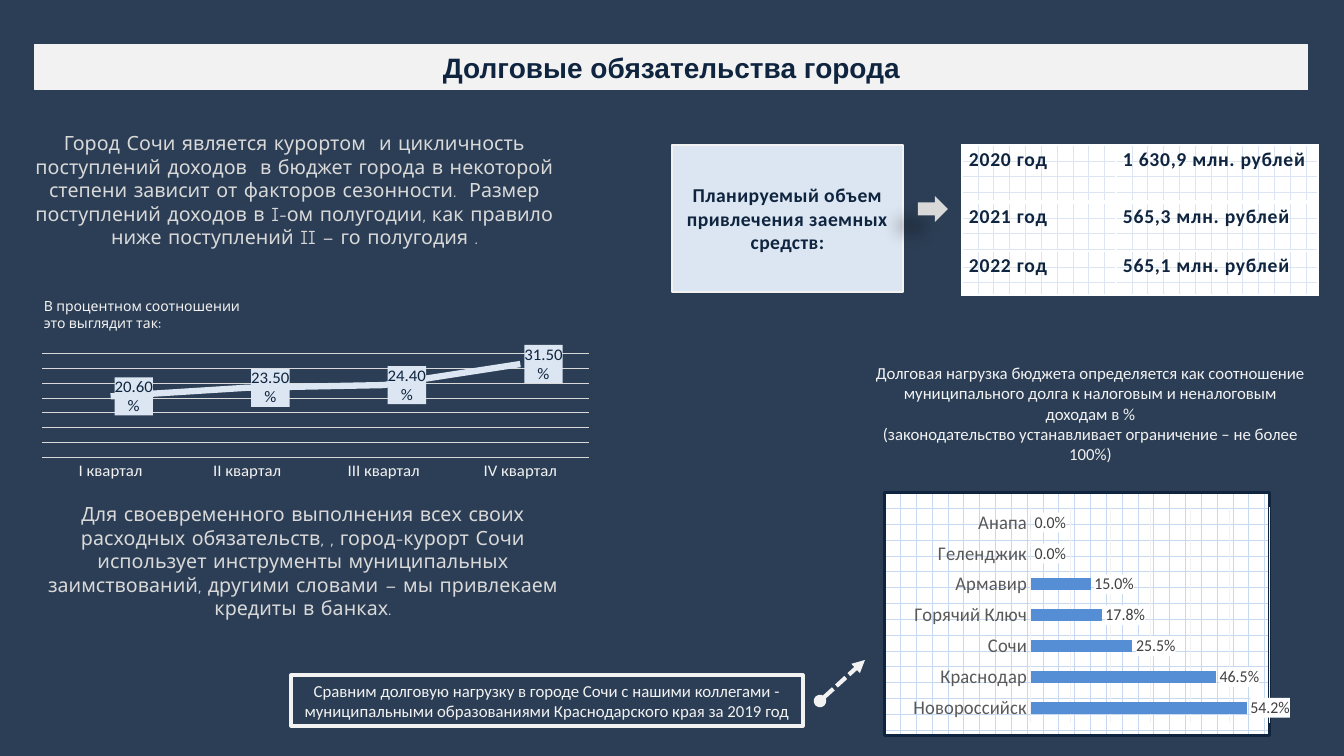
import pptx
import pptx.util
import pptx.oxml
import pptx.oxml.ns
import pptx.chart.data
import pptx.dml.color
import pptx.enum.chart
import pptx.enum.dml
import pptx.enum.shapes
import pptx.enum.text

RGB = pptx.dml.color.RGBColor
Pt = pptx.util.Pt
ALIGN = pptx.enum.text.PP_ALIGN
ANCHOR = pptx.enum.text.MSO_ANCHOR
SHAPE = pptx.enum.shapes.MSO_SHAPE
CHART = pptx.enum.chart.XL_CHART_TYPE

NAVY = RGB(0x0F, 0x24, 0x3E)
BACKDROP = RGB(0x2C, 0x3E, 0x55)
OFFWHITE = RGB(0xF2, 0xF2, 0xF2)
WHITE = RGB(0xFF, 0xFF, 0xFF)
PALE = RGB(0xDC, 0xE6, 0xF2)
SILVER = RGB(0xD9, 0xD9, 0xD9)
GRID_BLUE = RGB(0xC6, 0xD9, 0xF1)
BLUE = RGB(0x55, 0x8E, 0xD5)
GRAY = RGB(0x59, 0x59, 0x59)
DARK_GRAY = RGB(0x40, 0x40, 0x40)

# Content
TITLE = "Долговые обязательства города"
PLAN = "Планируемый объем привлечения заемных средств:"
BORROWING = [
    ("2020 год", "1 630,9 млн. рублей"),
    ("2021 год", "565,3 млн. рублей"),
    ("2022 год", "565,1 млн. рублей"),
]
SEASONS = ("Город Сочи является курортом  и цикличность поступлений доходов  в бюджет города "
           "в некоторой степени зависит от факторов сезонности.  Размер поступлений доходов "
           "в I-ом полугодии, как правило ниже поступлений II – го полугодия .")
CREDITS = ("Для своевременного выполнения всех своих расходных обязательств, , город-курорт Сочи "
           "использует инструменты муниципальных заимствований, другими словами – "
           "мы привлекаем кредиты в банках.")
PERCENT_NOTE = "В процентном соотношении это выглядит так:"
LOAD_NOTE = ("Долговая нагрузка бюджета определяется как соотношение муниципального долга "
             "к налоговым и неналоговым доходам в %\n"
             "(законодательство устанавливает ограничение – не более 100%)")
COMPARE = ("Сравним долговую нагрузку в городе Сочи с нашими коллегами - "
           "муниципальными образованиями Краснодарского края за 2019 год")
QUARTERS = {"I квартал": 0.206, "II квартал": 0.235, "III квартал": 0.244, "IV квартал": 0.315}
DEBT_LOAD = {"Анапа": 0, "Геленджик": 0, "Армавир": 0.15, "Горячий Ключ": 0.178,
             "Сочи": 0.255, "Краснодар": 0.465, "Новороссийск": 0.542}

SLIDE_W, SLIDE_H = 1344, 756
PX = 914400 / 100.8


def px(*lengths):
    return [round(length * PX) for length in lengths]


def xml(markup):
    return pptx.oxml.parse_xml(markup.replace(">", " " + pptx.oxml.ns.nsdecls("a", "c") + ">", 1))


def set_font(font, face, size, color, bold=False):
    font.name, font.size, font.bold = face, Pt(size), bold
    font.color.rgb = color


def write(frame, text, face, size, color, bold=False, align=ALIGN.CENTER, spacing=0):
    frame.word_wrap = True
    frame.text = text
    for paragraph in frame.paragraphs:
        paragraph.alignment = align
        for run in paragraph.runs:
            set_font(run.font, face, size, color, bold)
            if spacing:
                run.font._element.set("spc", str(spacing))


def add_box(place, preset=SHAPE.RECTANGLE, fill=None, line=None, width=1):
    box = slide.shapes.add_shape(preset, *px(*place))
    box.shadow.inherit = False
    if fill is None:
        box.fill.background()
    else:
        box.fill.solid()
        box.fill.fore_color.rgb = fill
    if line is None:
        box.line.fill.background()
    else:
        box.line.color.rgb = line
        box.line.width = Pt(width)
    return box


def add_chart(kind, place, values, number_format, top, color, axis_size, axis_color,
              grid_color, label_color, label_fill):
    data = pptx.chart.data.CategoryChartData(number_format=number_format)
    data.categories = list(values)
    data.add_series("Series 1", list(values.values()))
    chart = slide.shapes.add_chart(kind, *px(*place), data).chart
    chart.has_legend = chart.has_title = False
    chart.font.name, chart.font.size = "Calibri", Pt(10)
    categories, scale = chart.category_axis, chart.value_axis
    categories.major_tick_mark = pptx.enum.chart.XL_TICK_MARK.NONE
    set_font(categories.tick_labels.font, "Calibri", axis_size, axis_color)
    scale.visible = False
    scale.minimum_scale, scale.maximum_scale = 0, top
    scale.has_major_gridlines = True
    scale.major_gridlines.format.line.color.rgb = grid_color
    scale.major_gridlines.format.line.width = Pt(0.75)
    plot = chart.plots[0]
    plot.vary_by_categories = False
    labels = plot.series[0].data_labels
    labels.show_value = True
    labels.number_format, labels.number_format_is_linked = number_format, False
    set_font(labels.font, "Calibri", 12, label_color)
    labels._element.find(pptx.oxml.ns.qn("c:txPr")).addprevious(xml(
        f'<c:spPr><a:solidFill><a:srgbClr val="{label_fill}"/></a:solidFill></c:spPr>'))
    return chart


presentation = pptx.Presentation()
presentation.slide_width, presentation.slide_height = px(SLIDE_W, SLIDE_H)
slide = presentation.slides.add_slide(presentation.slide_layouts[6])
slide.background.fill.solid()
slide.background.fill.fore_color.rgb = BACKDROP

# Title band and planned borrowing
title = add_box((35, 45, 1273, 45), fill=OFFWHITE, line=OFFWHITE, width=0.75)
write(title.text_frame, TITLE, "Arial", 20, NAVY, bold=True)
plan = add_box((672, 145, 231, 147), fill=PALE, line=OFFWHITE, width=2)
write(plan.text_frame, PLAN, "Calibri", 14, NAVY, bold=True, spacing=30)

# Borrowing by year
borrowing = slide.shapes.add_table(3, 2, *px(962, 145, 356, 150)).table
borrowing.first_row = borrowing.horz_banding = False
for column, width in zip(borrowing.columns, px(154, 202)):
    column.width = width
for row, height in zip(borrowing.rows, px(57, 49, 44)):
    row.height = height
for r, texts in enumerate(BORROWING):
    for c, text in enumerate(texts):
        cell = borrowing.cell(r, c)
        write(cell.text_frame, text, "Calibri", 14, NAVY, True, ALIGN.LEFT, 50)
        cell.margin_left, cell.margin_right, cell.margin_top, cell.margin_bottom = px(7, 7, 3, 3)
        cell.fill.patterned()
        cell.fill.pattern = pptx.enum.dml.MSO_PATTERN.DOTTED_GRID
        cell.fill.fore_color.rgb, cell.fill.back_color.rgb = PALE, WHITE
        for i, side in enumerate("LRTB"):
            heavy = (r, side) in ((0, "B"), (1, "T"))
            cell._tc.get_or_add_tcPr().insert(i, xml(
                f'<a:ln{side} w="{Pt(3 if heavy else 1)}"><a:solidFill>'
                f'<a:srgbClr val="{WHITE}"/></a:solidFill></a:ln{side}>'))

# Arrow with a soft shadow
arrow = add_box((918, 196, 30, 26), SHAPE.RIGHT_ARROW, fill=SILVER)
arrow._element.spPr.find(pptx.oxml.ns.qn("a:effectLst")).append(xml(
    f'<a:outerShdw blurRad="{Pt(11.8)}" dist="{Pt(19.7)}" dir="{141 * 60000}">'
    '<a:srgbClr val="000000"><a:alpha val="28000"/></a:srgbClr></a:outerShdw>'))

# Text blocks
for place, text, face, size, color, align in [
    ((16, 126, 557, 152), SEASONS, "Comic Neue", 14, SILVER, ALIGN.CENTER),
    ((22, 497, 562, 129), CREDITS, "Comic Neue", 14, SILVER, ALIGN.CENTER),
    ((34, 293, 239, 44), PERCENT_NOTE, "Karla", 10, OFFWHITE, ALIGN.LEFT),
    ((865, 358, 451, 112), LOAD_NOTE, "Calibri", 12, OFFWHITE, ALIGN.CENTER),
]:
    block = slide.shapes.add_textbox(*px(*place))
    write(block.text_frame, text, face, size, color, align=align)

# Income by quarter
income = add_chart(CHART.LINE, (31, 345, 569, 138), QUARTERS, "0.00%", 0.35, PALE,
                   12, OFFWHITE, SILVER, NAVY, PALE)
income.category_axis.format.line.color.rgb = SILVER
income.category_axis.format.line.width = Pt(0.75)
trend = income.plots[0].series[0]
trend.smooth = False
trend.marker.style = pptx.enum.chart.XL_MARKER_STYLE.NONE
trend.format.line.color.rgb = PALE
trend.format.line.width = Pt(4.5)
trend.data_labels.position = pptx.enum.chart.XL_LABEL_POSITION.RIGHT

# Comparison caption and pointer
compare = add_box((291, 675, 512, 51), line=OFFWHITE, width=2.25)
write(compare.text_frame, COMPARE, "Calibri", 12, OFFWHITE)
pointer = slide.shapes.add_connector(pptx.enum.shapes.MSO_CONNECTOR.STRAIGHT, *px(820, 701, 865, 660))
pointer.line.color.rgb = OFFWHITE
pointer.line.width = Pt(3)
pointer.line.dash_style = pptx.enum.dml.MSO_LINE.SQUARE_DOT
pointer.line._get_or_add_ln().extend([xml('<a:headEnd type="oval"/>'.replace("/>", "></a:headEnd>")),
                                      xml('<a:tailEnd type="triangle"></a:tailEnd>')])
pointer._element.spPr.append(xml("<a:effectLst></a:effectLst>"))

# Debt load by town
load = add_chart(CHART.BAR_CLUSTERED, (883, 491, 407, 246), DEBT_LOAD, "0.0%", 0.6, BLUE,
                 14, GRAY, OFFWHITE, DARK_GRAY, WHITE)
load.category_axis.reverse_order = True
load.category_axis.format.line.fill.background()
load.plots[0].gap_width = 150
bars = load.plots[0].series[0]
bars.format.fill.solid()
bars.format.fill.fore_color.rgb = BLUE
bars.data_labels.position = pptx.enum.chart.XL_LABEL_POSITION.OUTSIDE_END
load_chart = load._chartSpace.chart
load_chart.addnext(xml(
    f'<c:spPr><a:pattFill prst="dotGrid"><a:fgClr><a:srgbClr val="{GRID_BLUE}"/></a:fgClr>'
    f'<a:bgClr><a:srgbClr val="{WHITE}"/></a:bgClr></a:pattFill><a:ln w="{Pt(2.25)}">'
    f'<a:solidFill><a:srgbClr val="{NAVY}"/></a:solidFill></a:ln></c:spPr>'))
plot_area = load_chart.plotArea
for old in plot_area.findall(pptx.oxml.ns.qn("c:layout")):
    plot_area.remove(old)
plot_area.insert(0, xml(
    '<c:layout><c:manualLayout><c:layoutTarget val="inner"/><c:xMode val="edge"/>'
    '<c:yMode val="edge"/><c:x val="0.38"/><c:y val="0.06"/><c:w val="0.62"/>'
    '<c:h val="0.89"/></c:manualLayout></c:layout>'))

presentation.save("out.pptx")
